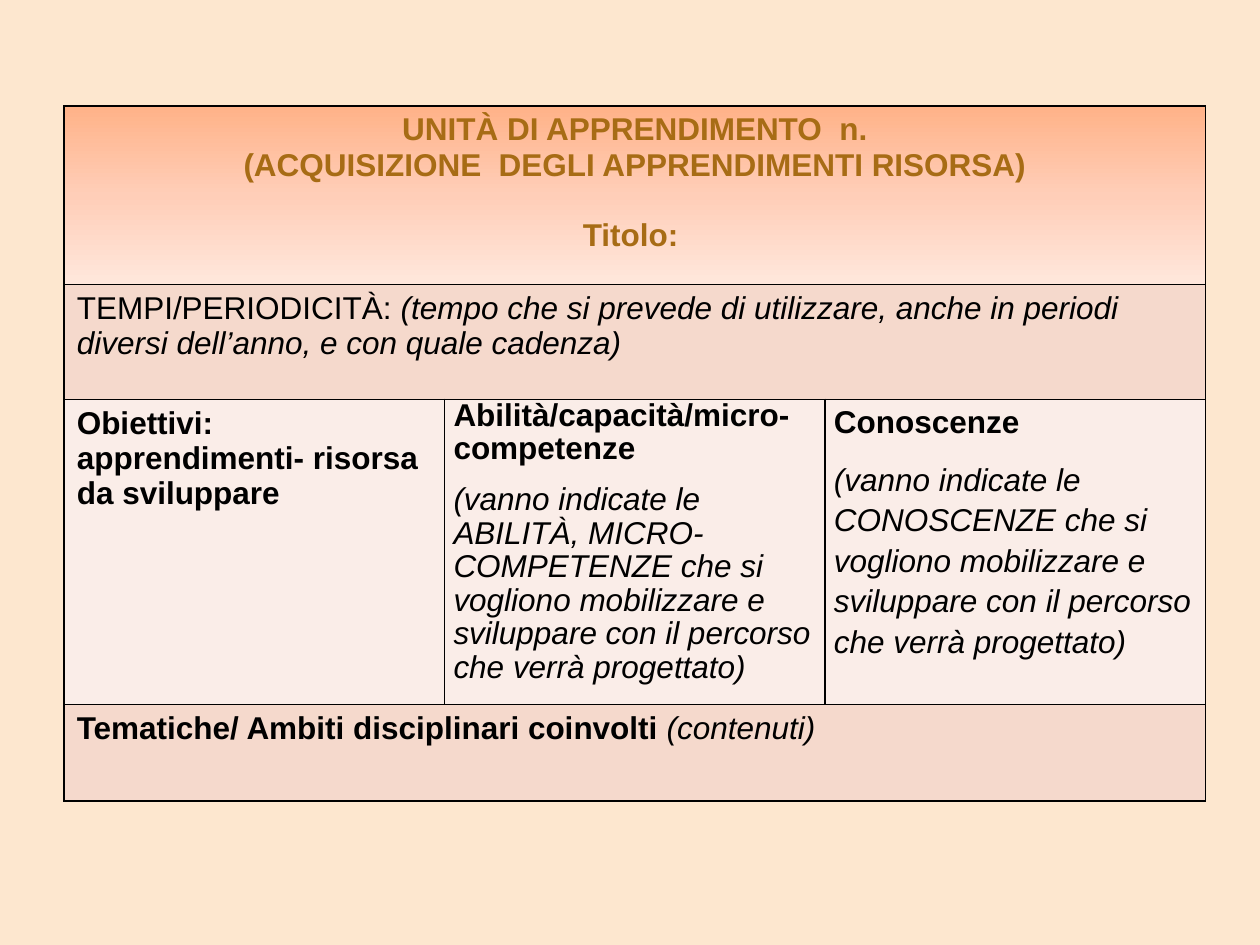
from dataclasses import dataclass

from lxml.etree import SubElement as Sub
from pptx import Presentation
from pptx.dml.color import RGBColor as Rgb
from pptx.enum.text import PP_ALIGN as Align
from pptx.oxml.ns import qn
from pptx.util import Inches, Pt


@dataclass(frozen=True)
class Theme:
    font: str = "Arial"
    size: int = 18
    back: str = "FDE7CF"
    ink: str = "000000"
    head: str = "A76C15"
    band: str = "F5D9CC"
    pale: str = "FAEDE8"
    fade: tuple = ("FFB288", "FFCEB8", "FFE7DC")


THEME = Theme()
WIDE, HIGH = 10, 7.5
LEFT, TOP = 0.51, 0.84
COL = 3.02
ROWS = (1.42, 0.91, 2.42, 0.77)

# Each paragraph is a list of (text, style); b is bold, i is italic
TITLE = [
    [("UNITÀ DI APPRENDIMENTO  n.", "b")],
    [("(ACQUISIZIONE  DEGLI APPRENDIMENTI RISORSA)", "b")],
    [("Titolo: ", "b")],
]
TIMES = [[
    ("TEMPI/PERIODICITÀ: ", ""),
    ("(tempo che si prevede di utilizzare, anche in periodi "
     "diversi dell’anno, e con quale cadenza)", "i"),
]]
GOALS = [[("Obiettivi: apprendimenti- risorsa da sviluppare", "b")]]
SKILLS = [
    [("Abilità/capacità/micro-competenze", "b")],
    [("(vanno indicate le ABILITÀ, MICRO-COMPETENZE che si vogliono "
      "mobilizzare e  sviluppare con il percorso che verrà progettato)", "i")],
]
FACTS = [
    [("Conoscenze", "b")],
    [("(vanno indicate le CONOSCENZE che si vogliono mobilizzare e "
      "sviluppare con il percorso che verrà progettato)", "i")],
]
TOPICS = [[
    ("Tematiche/ Ambiti disciplinari coinvolti ", "b"),
    ("(contenuti)", "i"),
]]


def write(cell, paras, color=THEME.ink):
    frame = cell.text_frame
    frame.text = "\n".join("" for _ in paras)
    for para, parts in zip(frame.paragraphs, paras):
        for text, style in parts:
            run = para.add_run()
            run.text = text
            font = run.font
            font.name, font.size = THEME.font, Pt(THEME.size)
            font.bold, font.italic = "b" in style, "i" in style
            font.color.rgb = Rgb.from_string(color)


def space(cell, lines):
    """Tight margins and wider paragraphs for the descriptive cells."""
    cell.margin_left = cell.margin_right = Inches(0.07)
    cell.margin_top = cell.margin_bottom = 0
    for para in cell.text_frame.paragraphs:
        para.line_spacing = lines
        para.space_after = Pt(10)


def paint(cell, color):
    cell.fill.solid()
    cell.fill.fore_color.rgb = Rgb.from_string(color)


def shade(cell, colors):
    """Fill from top to bottom with evenly placed colours."""
    grad = Sub(cell._tc.get_or_add_tcPr(), qn("a:gradFill"), rotWithShape="1")
    stops = Sub(grad, qn("a:gsLst"))
    step = 100000 // (len(colors) - 1)
    for i, color in enumerate(colors):
        stop = Sub(stops, qn("a:gs"), pos=str(i * step))
        Sub(stop, qn("a:srgbClr"), val=color)
    Sub(grad, qn("a:lin"), ang="5400000", scaled="0")


def frame(cell):
    """Thin line on all four sides."""
    props = cell._tc.get_or_add_tcPr()
    for side in "LRTB":
        line = Sub(props, qn(f"a:ln{side}"), w=str(Pt(1)))
        fill = Sub(line, qn("a:solidFill"))
        Sub(fill, qn("a:srgbClr"), val=THEME.ink)


def grid(slide):
    shape = slide.shapes.add_table(
        len(ROWS), 3, Inches(LEFT), Inches(TOP),
        Inches(3 * COL), Inches(sum(ROWS)))
    table = shape.table
    table.first_row = table.horz_banding = False
    for col in table.columns:
        col.width = Inches(COL)
    for row, high in zip(table.rows, ROWS):
        row.height = Inches(high)
    for cell in table.iter_cells():
        frame(cell)
    for row in (0, 1, 3):
        table.cell(row, 0).merge(table.cell(row, 2))
    return table


def main():
    prs = Presentation()
    prs.slide_width, prs.slide_height = Inches(WIDE), Inches(HIGH)
    slide = prs.slides.add_slide(prs.slide_layouts[6])
    back = slide.background.fill
    back.solid()
    back.fore_color.rgb = Rgb.from_string(THEME.back)
    table = grid(slide)

    # Heading
    head = table.cell(0, 0)
    write(head, TITLE, THEME.head)
    shade(head, THEME.fade)
    for para in head.text_frame.paragraphs:
        para.alignment = Align.CENTER
    head.text_frame.paragraphs[-1].space_before = Pt(20)

    # Full-width bands
    for row, paras in ((1, TIMES), (3, TOPICS)):
        write(table.cell(row, 0), paras)
        paint(table.cell(row, 0), THEME.band)

    # Three columns
    for col, paras in enumerate((GOALS, SKILLS, FACTS)):
        write(table.cell(2, col), paras)
        paint(table.cell(2, col), THEME.pale)
    space(table.cell(2, 1), 0.95)
    space(table.cell(2, 2), 1.15)

    prs.save("out.pptx")


if __name__ == "__main__":
    main()
